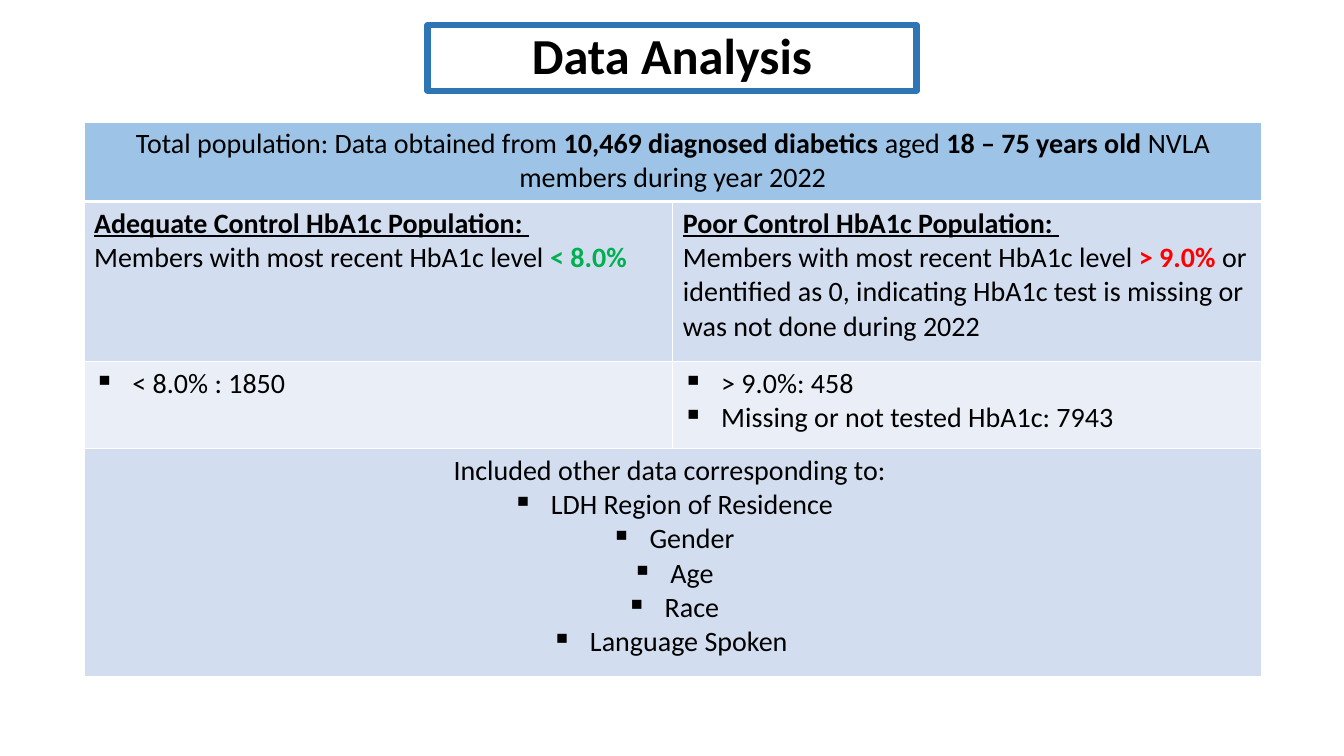
import dataclasses

import lxml.etree
import pptx
import pptx.dml.color
import pptx.enum.dml
import pptx.enum.text
import pptx.oxml.ns
import pptx.util

ALIGN = pptx.enum.text.PP_ALIGN
COLUMNS, ROWS = 16, 30
ROW_HEIGHTS = (3.16, 6.36, 3.44, 9.04)


@dataclasses.dataclass(frozen=True)
class Theme:
    font: str = "Calibri"
    title_size: int = 36
    body_size: int = 20
    text: str = "000000"
    good: str = "00B050"
    poor: str = "FF0000"
    frame: str = "2E75B6"
    border: str = "FFFFFF"
    header: str = "9DC3E6"
    band: str = "D2DEEF"
    light: str = "EAEFF7"
    indent: float = 0.38


THEME = Theme()
STYLES = {
    "plain": ({"bold": False}, THEME.text),
    "bold": ({"bold": True}, THEME.text),
    "heading": ({"bold": True, "underline": True}, THEME.text),
    "good": ({"bold": True}, THEME.good),
    "poor": ({"bold": True}, THEME.poor),
}


@dataclasses.dataclass(frozen=True)
class Line:
    spans: tuple
    bullet: bool = False


def plain(text):
    return Line(((text, "plain"),))


def heading(text):
    return Line(((text, "heading"),))


def bullets(*texts):
    return [Line(((text, "plain"),), True) for text in texts]


TABLE = (
    (THEME.header, ([Line((
        ("Total population: Data obtained from ", "plain"),
        ("10,469 diagnosed diabetics ", "bold"),
        ("aged ", "plain"),
        ("18 – 75 years old ", "bold"),
        ("NVLA members during year 2022", "plain"),
    ))],)),
    (THEME.band, (
        [heading("Adequate Control HbA1c Population: "),
         Line((("Members with most recent HbA1c level ", "plain"), ("< 8.0%", "good")))],
        [heading("Poor Control HbA1c Population: "),
         Line((
             ("Members with most recent HbA1c level ", "plain"),
             ("> 9.0% ", "poor"),
             ("or identified as 0, indicating HbA1c test is missing or "
              "was not done during 2022", "plain"),
         ))],
    )),
    (THEME.light, (
        bullets("< 8.0% : 1850"),
        bullets("> 9.0%: 458", "Missing or not tested HbA1c: 7943"),
    )),
    (THEME.band, ([
        plain("Included other data corresponding to: "),
        *bullets("LDH Region of Residence", "Gender", "Age", "Race", "Language Spoken "),
    ],)),
)


def apply(target, values):
    for name, value in values.items():
        setattr(target, name, value)


def rgb(colour):
    return pptx.dml.color.RGBColor.from_string(colour)


def add_element(parent, tag, **attributes):
    return lxml.etree.SubElement(parent, pptx.oxml.ns.qn(tag), attributes)


def grid_box(deck, left, top, width, height):
    column, row = deck.slide_width / COLUMNS, deck.slide_height / ROWS
    return dict(left=int(left * column), top=int(top * row),
                width=int(width * column), height=int(height * row))


def write_span(para, text, style, size):
    span = para.add_run()
    span.text = text
    values, colour = STYLES[style]
    apply(span.font, {"name": THEME.font, "size": pptx.util.Pt(size), **values})
    span.font.color.rgb = rgb(colour)


def add_bullet(para):
    indent = pptx.util.Inches(THEME.indent)
    properties = para._p.get_or_add_pPr()
    properties.set("marL", str(indent))
    properties.set("indent", str(-indent))
    add_element(properties, "a:buChar", char="▪")


def write_lines(frame, lines, align):
    for index, line in enumerate(lines):
        para = frame.add_paragraph() if index else frame.paragraphs[0]
        para.alignment = align
        if line.bullet:
            add_bullet(para)
        for text, style in line.spans:
            write_span(para, text, style, THEME.body_size)


def paint_cell(cell, fill, bottom, top):
    properties = cell._tc.get_or_add_tcPr()
    for side, points in (("L", 1), ("R", 1), ("T", top), ("B", bottom)):
        line = add_element(properties, f"a:ln{side}", w=str(pptx.util.Pt(points)))
        add_element(add_element(line, "a:solidFill"), "a:srgbClr", val=THEME.border)
    cell.fill.solid()
    cell.fill.fore_color.rgb = rgb(fill)


def add_title(page, box):
    title = page.shapes.title
    apply(title, box)
    title.line.color.rgb = rgb(THEME.frame)
    title.line.width = pptx.util.Pt(4.5)
    add_element(title.line._get_or_add_ln(), "a:round")
    apply(title.text_frame, {
        "word_wrap": True,
        "auto_size": pptx.enum.text.MSO_AUTO_SIZE.NONE,
        "vertical_anchor": pptx.enum.text.MSO_ANCHOR.MIDDLE,
    })
    para = title.text_frame.paragraphs[0]
    apply(para, {"alignment": ALIGN.CENTER, "line_spacing": 0.9})
    write_span(para, "Data Analysis", "bold", THEME.title_size)


def add_population_table(page, box):
    table = page.shapes.add_table(len(TABLE), 2, **box).table
    for index, (fill, contents) in enumerate(TABLE):
        table.rows[index].height = int(box["height"] * ROW_HEIGHTS[index] / sum(ROW_HEIGHTS))
        cells = [table.cell(index, column) for column in range(2)]
        for cell in cells:
            paint_cell(cell, fill, 3 if index == 0 else 1, 3 if index == 1 else 1)
        merged = len(contents) == 1
        if merged:
            cells[0].merge(cells[1])
        for cell, lines in zip(cells, contents):
            write_lines(cell.text_frame, lines, ALIGN.CENTER if merged else ALIGN.LEFT)


def main():
    deck = pptx.Presentation()
    apply(deck, {"slide_width": pptx.util.Inches(13.33), "slide_height": pptx.util.Inches(7.5)})
    page = deck.slides.add_slide(deck.slide_layouts[5])
    add_title(page, grid_box(deck, 5.09, 1, 5.82, 2.6))
    add_population_table(page, grid_box(deck, 1, 4.84, 14.02, sum(ROW_HEIGHTS)))
    deck.save("out.pptx")


if __name__ == "__main__":
    main()
